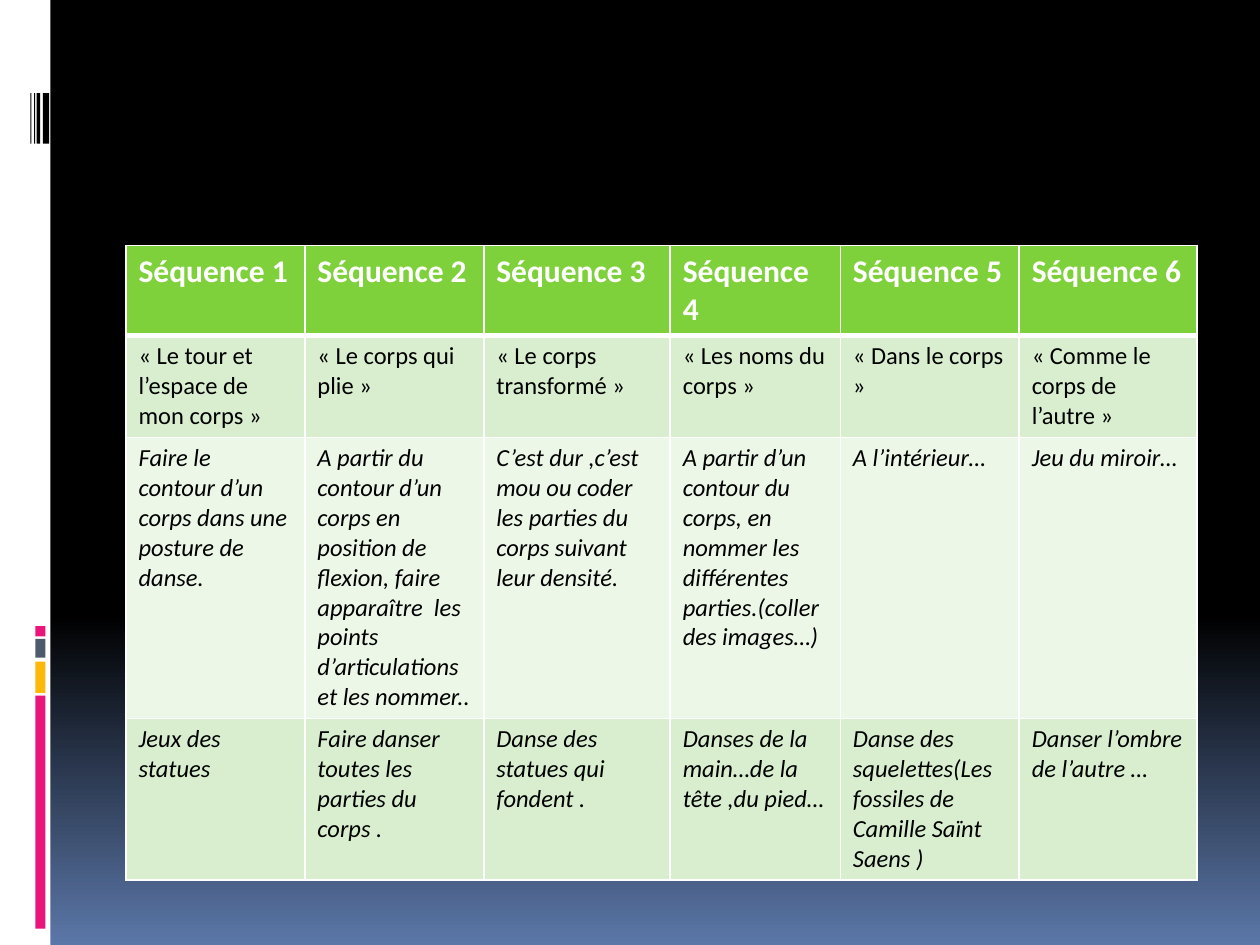
import copy
from typing import NamedTuple

import pptx
import pptx.dml.color
import pptx.enum.shapes
import pptx.oxml.ns
import pptx.util
from lxml import etree

Inches = pptx.util.Inches
Pt = pptx.util.Pt
RGBColor = pptx.dml.color.RGBColor
qn = pptx.oxml.ns.qn

WHITE = RGBColor(0xFF, 0xFF, 0xFF)
BLACK = RGBColor(0x00, 0x00, 0x00)
BLUE = RGBColor(0x5B, 0x77, 0xA8)
PINK = RGBColor(0xEA, 0x15, 0x7A)
AMBER = RGBColor(0xFE, 0xB8, 0x0A)
SLATE = RGBColor(0x4E, 0x5B, 0x6F)
GREEN = RGBColor(0x7F, 0xD1, 0x3B)
GREEN_LIGHT = RGBColor(0xD8, 0xEE, 0xCE)
GREEN_PALE = RGBColor(0xEC, 0xF7, 0xE8)


class Bar(NamedTuple):
    left: float
    top: float
    width: float
    height: float
    color: RGBColor


class RowStyle(NamedTuple):
    height: float
    fill: RGBColor
    color: RGBColor
    size: int
    bold: bool
    italic: bool
    bottom: int


BARS = [
    Bar(0, 0, 0.4, 7.5, WHITE),
    Bar(0.28, 5.52, 0.08, 1.85, PINK),
    Bar(0.28, 5.25, 0.08, 0.25, AMBER),
    Bar(0.28, 5.07, 0.08, 0.15, SLATE),
    Bar(0.28, 4.97, 0.08, 0.08, PINK),
    *(Bar(left, 0.74, width, 0.4, BLACK)
      for left, width in [(0.34, 0.05), (0.29, 0.03), (0.27, 0.01), (0.24, 0.01)]),
]

COL_WIDTHS = [1.42, 1.42, 1.48, 1.35, 1.42, 1.41]
ROW_STYLES = [
    RowStyle(0.71, GREEN, WHITE, 18, True, False, 3),
    RowStyle(0.81, GREEN_LIGHT, BLACK, 14, False, False, 1),
    RowStyle(2.23, GREEN_PALE, BLACK, 14, False, True, 1),
    RowStyle(1.28, GREEN_LIGHT, BLACK, 14, False, True, 1),
]
ROWS = [
    ["Séquence 1", "Séquence 2", "Séquence 3", "Séquence\n4", "Séquence 5", "Séquence 6"],
    ["« Le tour et l’espace de mon corps »", "« Le corps qui plie »",
     "« Le corps transformé »", "« Les noms du corps »",
     "« Dans le corps »", "« Comme le corps de l’autre »"],
    ["Faire le contour d’un corps dans une posture de danse.",
     "A partir du contour d’un corps en position de flexion, faire apparaître  les  "
     "points d’articulations  et les nommer..",
     "C’est dur ,c’est mou ou coder les parties du corps suivant leur densité.",
     "A partir d’un contour du corps, en nommer les différentes parties.(coller des images…)",
     "A l’intérieur…", "Jeu du miroir…"],
    ["Jeux des statues", "Faire danser toutes les parties du corps .",
     "Danse des statues qui fondent .", "Danses de la main…de la tête ,du pied…",
     "Danse des squelettes(Les fossiles de Camille Saïnt Saens )",
     "Danser l’ombre de l’autre …"],
]


def set_background(s) -> None:
    """Black down to 65 %, then fading to blue at the bottom."""
    fill = s.background.fill
    fill.gradient()
    fill.gradient_angle = 270
    stops = s._element.find(".//" + qn("a:gsLst"))
    stops.insert(1, copy.deepcopy(stops[0]))
    for stop, (position, color) in zip(
            fill.gradient_stops, [(0, BLACK), (0.65, BLACK), (1, BLUE)]):
        stop.position = position
        stop.color.rgb = color


def add_bar(s, bar: Bar) -> None:
    sp = s.shapes.add_shape(
        pptx.enum.shapes.MSO_SHAPE.RECTANGLE,
        Inches(bar.left), Inches(bar.top), Inches(bar.width), Inches(bar.height))
    sp.shadow.inherit = False
    sp.fill.solid()
    sp.fill.fore_color.rgb = bar.color
    sp.line.fill.background()


def set_borders(cell, bottom: int) -> None:
    """White lines of 1 pt, with the given width at the bottom."""
    tc_pr = cell._tc.get_or_add_tcPr()
    for i, (side, width) in enumerate([("L", 1), ("R", 1), ("T", 1), ("B", bottom)]):
        ln = etree.Element(qn(f"a:ln{side}"), w=str(Pt(width)))
        solid = etree.SubElement(ln, qn("a:solidFill"))
        etree.SubElement(solid, qn("a:srgbClr"), val=str(WHITE))
        tc_pr.insert(i, ln)


def fill_cell(cell, text: str, style: RowStyle) -> None:
    cell.fill.solid()
    cell.fill.fore_color.rgb = style.fill
    set_borders(cell, style.bottom)
    tf = cell.text_frame
    for i, line in enumerate(text.split("\n")):
        p = tf.add_paragraph() if i else tf.paragraphs[0]
        r = p.add_run()
        r.text = line
        r.font.name = "Calibri"
        r.font.size = Pt(style.size)
        r.font.bold = style.bold
        r.font.italic = style.italic
        r.font.color.rgb = style.color


def add_sequence_table(s) -> None:
    height = sum(style.height for style in ROW_STYLES)
    table = s.shapes.add_table(
        len(ROWS), len(COL_WIDTHS), Inches(1), Inches(1.95),
        Inches(sum(COL_WIDTHS)), Inches(height)).table
    for col, width in zip(table.columns, COL_WIDTHS):
        col.width = Inches(width)
    for row, style, texts in zip(table.rows, ROW_STYLES, ROWS):
        row.height = Inches(style.height)
        for cell, text in zip(row.cells, texts):
            fill_cell(cell, text, style)


def main() -> None:
    prs = pptx.Presentation()
    prs.slide_width = Inches(10)
    prs.slide_height = Inches(7.5)
    s = prs.slides.add_slide(prs.slide_layouts[6])
    set_background(s)
    for bar in BARS:
        add_bar(s, bar)
    add_sequence_table(s)
    prs.save("out.pptx")


if __name__ == "__main__":
    main()
